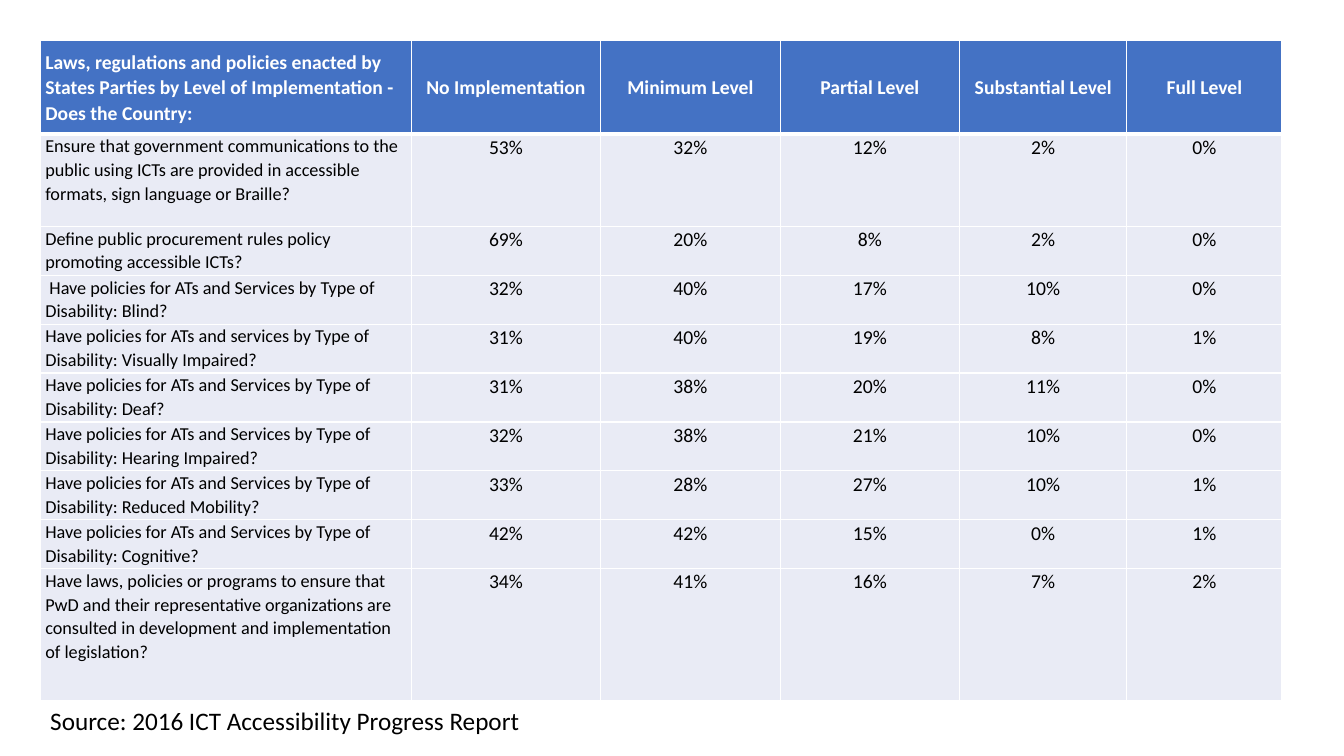
from lxml.etree import SubElement
from pptx import Presentation
from pptx.dml.color import RGBColor
from pptx.enum.text import MSO_ANCHOR, PP_ALIGN
from pptx.oxml import parse_xml
from pptx.oxml.ns import nsdecls, qn
from pptx.util import Pt

COLORS = {"head": "4472C4", "body": "E9EBF5", "line": "FFFFFF",
          "light": "FFFFFF", "dark": "000000"}
WIDTHS = [264.96, 135.36, 128.16, 128.16, 119.52, 110.88]
HEIGHTS = [66.7, 66.2] + [34.95] * 7 + [94]

HEADS = ["Laws, regulations and policies enacted by States Parties "
         "by Level of Implementation -\nDoes the Country:",
         "No Implementation", "Minimum Level", "Partial Level",
         "Substantial Level", "Full Level"]
TYPE = "by Type of Disability:"
ROWS = [
    ("Ensure that government communications to the public using ICTs are "
     "provided in accessible formats, sign language or Braille?", 53, 32, 12, 2, 0),
    ("Define public procurement rules policy promoting accessible ICTs?",
     69, 20, 8, 2, 0),
    (f" Have policies for ATs and Services {TYPE} Blind?", 32, 40, 17, 10, 0),
    (f"Have policies for ATs and services {TYPE} Visually Impaired?",
     31, 40, 19, 8, 1),
    (f"Have policies for ATs and Services {TYPE} Deaf?", 31, 38, 20, 11, 0),
    (f"Have policies for ATs and Services {TYPE} Hearing Impaired?",
     32, 38, 21, 10, 0),
    (f"Have policies for ATs and Services {TYPE} Reduced Mobility?",
     33, 28, 27, 10, 1),
    (f"Have policies for ATs and Services {TYPE} Cognitive?", 42, 42, 15, 0, 1),
    ("Have laws, policies or programs to ensure that PwD and their "
     "representative organizations are consulted in development and "
     "implementation of legislation?", 34, 41, 16, 7, 2),
]


class Deck:
    font = "Calibri"

    def __init__(self, wide, high):
        self.prs = Presentation()
        self.prs.slide_width, self.prs.slide_height = Pt(wide), Pt(high)
        self.slide = self.prs.slides.add_slide(self.prs.slide_layouts[6])

    def words(self, frame, text, size, color, bold=False, align=PP_ALIGN.LEFT,
              space=None):
        frame.text = text
        for par in frame.paragraphs:
            par.alignment, par.line_spacing = align, space
            for run in par.runs:
                font = run.font
                font.name, font.size, font.bold = self.font, Pt(size), bold
                font.color.rgb = RGBColor.from_string(COLORS[color])

    def border(self, cell, widths):
        props = cell._tc.get_or_add_tcPr()
        for i, (side, width) in enumerate(widths.items()):
            line = parse_xml(f'<a:ln{side} {nsdecls("a")} w="{Pt(width)}"/>')
            fill = SubElement(line, qn("a:solidFill"))
            SubElement(fill, qn("a:srgbClr"), val=COLORS["line"])
            props.insert(i, line)

    def cell(self, cell, text, head, first):
        cell.fill.solid()
        cell.fill.fore_color.rgb = RGBColor.from_string(
            COLORS["head" if head else "body"])
        cell.margin_left = cell.margin_right = Pt(3.6)
        cell.margin_top = cell.margin_bottom = 0
        cell.vertical_anchor = MSO_ANCHOR.MIDDLE if head else MSO_ANCHOR.TOP
        self.words(cell.text_frame, text, 13 if first and not head else 14,
                   "light" if head else "dark", head,
                   PP_ALIGN.LEFT if first else PP_ALIGN.CENTER, 1.07)

    def table(self, left, top, widths, heights, rows):
        table = self.slide.shapes.add_table(
            len(heights), len(widths), Pt(left), Pt(top),
            Pt(sum(widths)), Pt(sum(heights))).table
        table.horz_banding = False
        for col, width in zip(table.columns, widths):
            col.width = Pt(width)
        for r, (row, high, texts) in enumerate(zip(table.rows, heights, rows)):
            row.height = Pt(high)
            for c, (cell, text) in enumerate(zip(row.cells, texts)):
                self.cell(cell, text, r == 0, c == 0)
                # Thick rule between the header and the body
                self.border(cell, {"L": 1, "R": 1, "T": 3 if r == 1 else 1,
                                   "B": 3 if r == 0 else 1})

    def label(self, left, top, wide, high, text, size):
        box = self.slide.shapes.add_textbox(Pt(left), Pt(top), Pt(wide), Pt(high))
        box.text_frame.word_wrap = True
        self.words(box.text_frame, text, size, "dark")


def main():
    deck = Deck(960, 540)

    # Implementation levels
    body = [[text] + [f"{n}%" for n in levels] for text, *levels in ROWS]
    deck.table(28.8, 28.8, WIDTHS, HEIGHTS, [HEADS] + body)

    # Source line
    deck.label(28.8, 500.4, 663.84, 28.8,
               "Source: 2016 ICT Accessibility Progress Report", 18)
    deck.prs.save("out.pptx")


if __name__ == "__main__":
    main()
